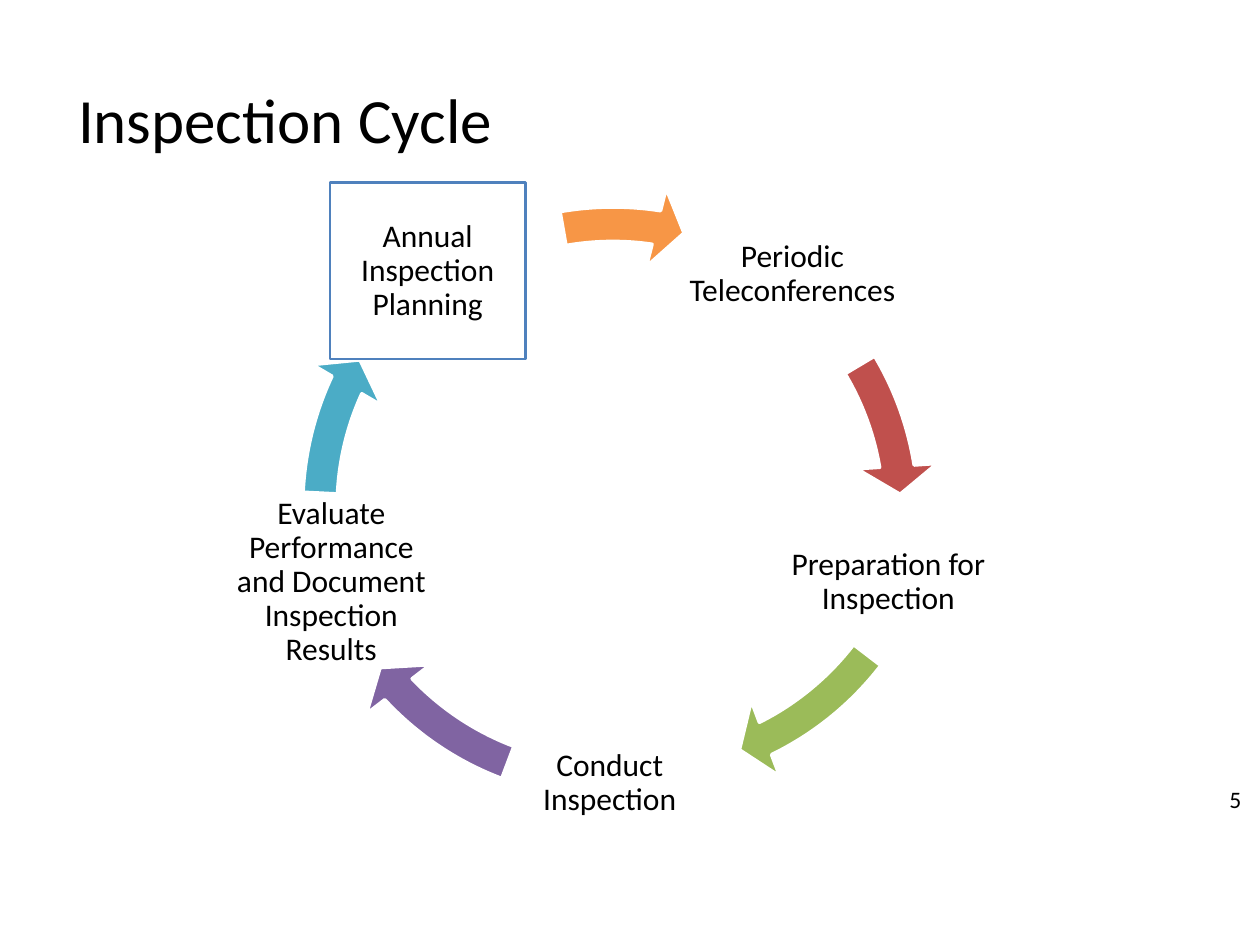
from pptx import Presentation
from pptx.dml.color import RGBColor
from pptx.enum.shapes import MSO_SHAPE
from pptx.enum.text import MSO_ANCHOR, MSO_AUTO_SIZE, PP_ALIGN
from pptx.util import Pt

BLACK = RGBColor(0x00, 0x00, 0x00)
WHITE = RGBColor(0xFF, 0xFF, 0xFF)
BLUE = RGBColor(0x4F, 0x81, 0xBD)
ORANGE = RGBColor(0xF7, 0x96, 0x46)
RED = RGBColor(0xC0, 0x50, 0x4D)
GREEN = RGBColor(0x9B, 0xBB, 0x59)
PURPLE = RGBColor(0x80, 0x64, 0xA2)
TEAL = RGBColor(0x4B, 0xAC, 0xC6)

STEP_HEIGHT = 100.8
RING_SIZE = 378
BAND_PERCENT = 5.2
HEAD_PERCENT = 6.1
HEAD_DEGREES = 5.6

STEPS = [
    ("Periodic Teleconferences", 370.1, 106.6, 165.6),
    ("Preparation for Inspection", 430.6, 282.2, 154.1),
    ("Conduct Inspection", 289.4, 397.4, 118.1),
    ("Evaluate Performance and Document Inspection Results", 133.2, 282.2, 112.3),
]

ARROWS = [
    (RED, 159.8, 104.4, 329.23, 350.63, 0),
    (GREEN, 175, 84.2, 37.55, 63.74, 0),
    (PURPLE, 159.8, 91.4, 110.67, 136.86, 0),
    (TEAL, 159.8, 100.8, 182.77, 204.87, 0),
    (ORANGE, 161.3, 105.1, 254.29, 272.77, 5.8),
]


def apply_format(target, values):
    for name, value in values.items():
        setattr(target, name, value)


def write_text(box, text, size, frame_format, paragraph_format):
    frame = box.text_frame
    apply_format(frame, frame_format)
    para = frame.paragraphs[0]
    apply_format(para, paragraph_format)
    span = para.add_run()
    span.text = text
    apply_format(span.font, {"name": "Calibri", "size": Pt(size)})
    span.font.color.rgb = BLACK


def add_title(page, text):
    title = page.shapes.title
    apply_format(title, {"left": Pt(37.4), "top": Pt(41.8),
                         "width": Pt(404.6), "height": Pt(51.1)})
    write_text(title, text, 36,
               {"word_wrap": True, "auto_size": MSO_AUTO_SIZE.NONE,
                "vertical_anchor": MSO_ANCHOR.MIDDLE},
               {"alignment": PP_ALIGN.LEFT})


def write_step(box, text):
    inset = Pt(2)
    write_text(box, text, 18,
               {"word_wrap": True, "vertical_anchor": MSO_ANCHOR.MIDDLE,
                "margin_left": inset, "margin_right": inset,
                "margin_top": inset, "margin_bottom": inset},
               {"alignment": PP_ALIGN.CENTER, "line_spacing": 0.9})


def add_step(page, text, left, top, width):
    box = page.shapes.add_textbox(Pt(left), Pt(top), Pt(width), Pt(STEP_HEIGHT))
    write_step(box, text)


def add_framed_step(page, text, left, top, width):
    box = page.shapes.add_shape(MSO_SHAPE.RECTANGLE, Pt(left), Pt(top),
                                Pt(width), Pt(STEP_HEIGHT))
    box.shadow.inherit = False
    box.fill.background()
    box.line.color.rgb = BLUE
    box.line.width = Pt(1.5)
    write_step(box, text)


def add_cycle_arrow(page, color, left, top, start, end, rotation):
    arrow = page.shapes.add_shape(MSO_SHAPE.CIRCULAR_ARROW, Pt(left), Pt(top),
                                  Pt(RING_SIZE), Pt(RING_SIZE))
    arrow.shadow.inherit = False
    arrow.rotation = rotation
    head, tip, tail = (angle * 0.6 for angle in (HEAD_DEGREES, end, start))
    values = (BAND_PERCENT / 100, head, tip, tail, HEAD_PERCENT / 100)
    for index, value in enumerate(values):
        arrow.adjustments[index] = value
    arrow.fill.solid()
    arrow.fill.fore_color.rgb = color
    arrow.line.color.rgb = WHITE
    arrow.line.width = Pt(2)


def add_page_number(page, text):
    box = page.shapes.add_textbox(Pt(691.9), Pt(445), Pt(28.1), Pt(23.8))
    write_text(box, text, 13.5,
               {"word_wrap": True, "auto_size": MSO_AUTO_SIZE.SHAPE_TO_FIT_TEXT},
               {"alignment": PP_ALIGN.CENTER})


def main():
    deck = Presentation()
    apply_format(deck, {"slide_width": Pt(720), "slide_height": Pt(540)})
    page = deck.slides.add_slide(deck.slide_layouts[5])
    add_title(page, "Inspection Cycle")
    for arrow in ARROWS:
        add_cycle_arrow(page, *arrow)
    add_framed_step(page, "Annual Inspection Planning", 188.6, 104.4, 111.6)
    for step in STEPS:
        add_step(page, *step)
    add_page_number(page, "5")
    deck.save("out.pptx")


if __name__ == "__main__":
    main()
